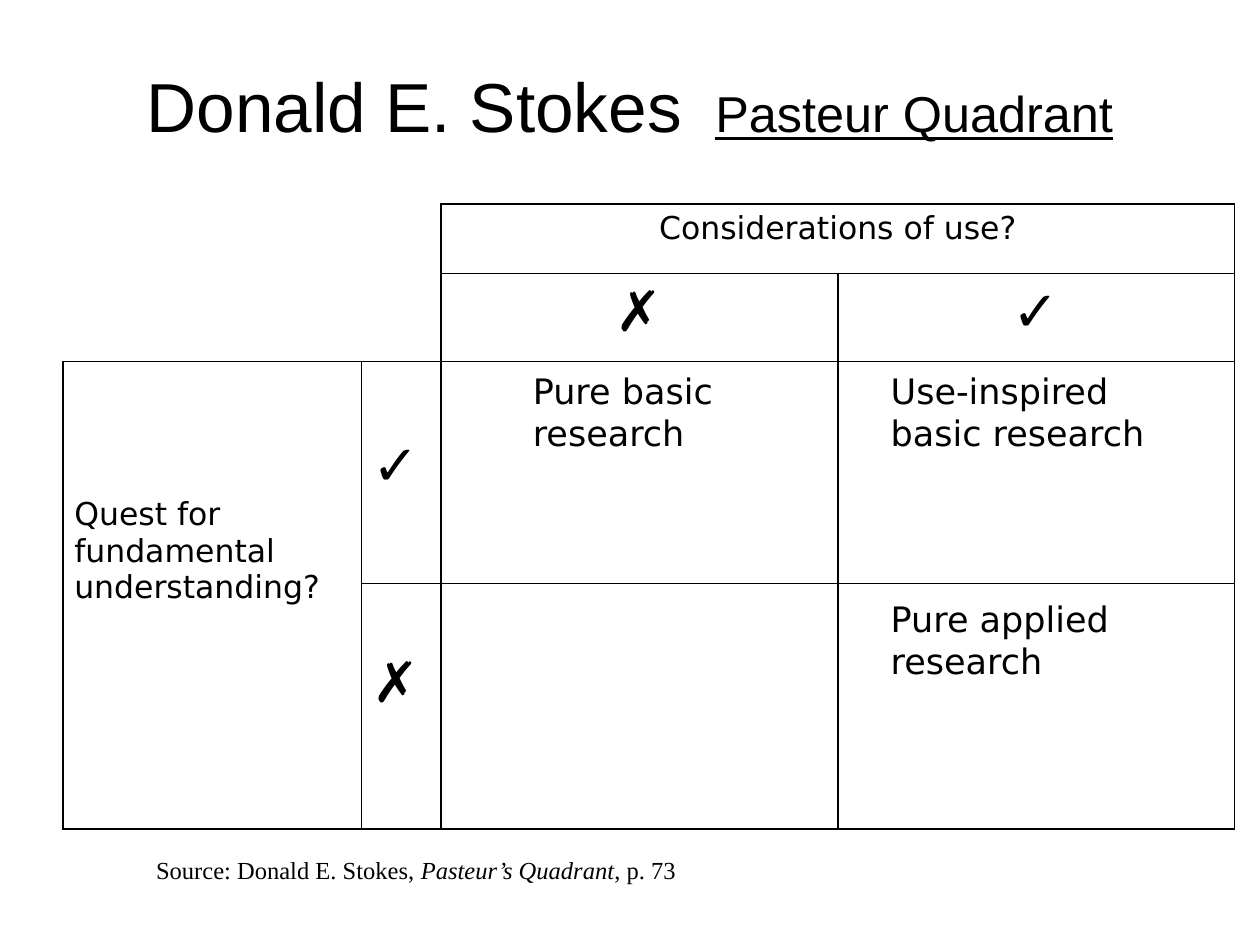
from lxml.etree import SubElement, Element
from pptx import Presentation
from pptx.dml.color import RGBColor
from pptx.enum.text import MSO_ANCHOR as Anchor, PP_ALIGN as Align
from pptx.oxml.ns import qn
from pptx.util import Inches, Pt

BLACK = RGBColor(0, 0, 0)
SANS, ARIAL, SERIF = "DejaVu Sans", "Arial", "Times New Roman"
COLS = [2.37, 0.63, 3.15, 3.15]
ROWS = [0.55, 0.7, 1.76, 1.95]
GRID = (0.5, 1.62, sum(COLS), sum(ROWS))


def write(frame, lines, font=SANS, size=18, align=Align.LEFT):
    """Fill a frame; each line is a string or a list of (text, format) runs."""
    for i, line in enumerate(lines):
        para = frame.paragraphs[0] if i == 0 else frame.add_paragraph()
        para.alignment = align
        for text, form in [(line, {})] if isinstance(line, str) else line:
            run = para.add_run()
            run.text = text
            face = run.font
            face.name, face.size = font, Pt(form.get("size", size))
            face.color.rgb = BLACK
            face.underline = form.get("under")
            face.italic = form.get("italic")


def label(slide, box, lines, wrap=False, anchor=Anchor.TOP, **form):
    frame = slide.shapes.add_textbox(*map(Inches, box)).text_frame
    frame.word_wrap = wrap
    frame.vertical_anchor = anchor
    write(frame, lines, **form)


def edge(cell, sides):
    """Draw the named sides of a cell in black and clear the others."""
    props = cell._tc.get_or_add_tcPr()
    for i, side in enumerate("LRTB"):
        line = Element(qn("a:ln" + side), w=str(Pt(1)))
        if side in sides:
            fill = SubElement(line, qn("a:solidFill"))
            SubElement(fill, qn("a:srgbClr"), val=str(BLACK))
        else:
            SubElement(line, qn("a:noFill"))
        props.insert(i, line)


def matrix(slide, box):
    shape = slide.shapes.add_table(len(ROWS), len(COLS), *map(Inches, box))
    table = shape.table
    table.first_row = table.horz_banding = False
    for col, wide in zip(table.columns, COLS):
        col.width = Inches(wide)
    for row, high in zip(table.rows, ROWS):
        row.height = Inches(high)
    bare = {(0, 0): "", (0, 1): "R", (1, 0): "B", (1, 1): "RB"}
    for r in range(len(ROWS)):
        for c in range(len(COLS)):
            cell = table.cell(r, c)
            cell.fill.background()
            edge(cell, bare.get((r, c), "LRTB"))
    table.cell(0, 2).merge(table.cell(0, 3))
    table.cell(2, 0).merge(table.cell(3, 0))

    mid, left = Align.CENTER, Align.LEFT
    for r, c, text, size, align, top in [
        (0, 2, "Considerations of use?", 18, mid, 0.05),
        (1, 2, "✗", 32, mid, 0.05),
        (1, 3, "✓", 32, mid, 0.05),
        (2, 0, "Quest for fundamental understanding?", 18, left, 1.07),
        (2, 1, "✓", 32, left, 0.57),
        (3, 1, "✗", 32, left, 0.53),
    ]:
        cell = table.cell(r, c)
        cell.margin_left = cell.margin_right = Inches(0.09)
        cell.margin_top, cell.margin_bottom = Inches(top), Inches(0.05)
        write(cell.text_frame, [text], size=size, align=align)


def kinds(slide, box):
    """Name the kinds of research in the quadrants of the matrix."""
    x, y = box[:2]
    mid = x + sum(COLS[:2])
    right = mid + COLS[2] + 0.32
    top = y + sum(ROWS[:2]) + 0.01
    low = y + sum(ROWS[:3]) + 0.06
    for left, high, wide, lines in [
        (mid + 0.63, top, 1.65, ["Pure basic", "research"]),
        (right, top, 2.22, ["Use-inspired", "basic research"]),
        (right, low, 1.95, ["Pure applied", "research"]),
    ]:
        label(slide, (left, high, wide, 0.77), lines, size=20)


def main():
    deck = Presentation()
    deck.slide_width, deck.slide_height = Inches(10), Inches(7.5)
    slide = deck.slides.add_slide(deck.slide_layouts[6])
    title = [("Donald E. Stokes ", {"size": 39.6}), (" ", {}),
             ("Pasteur Quadrant", {"under": True})]
    label(slide, (0.75, 0.21, 8.5, 1.25), [title], wrap=True,
          anchor=Anchor.MIDDLE, font=ARIAL, size=28.8, align=Align.CENTER)
    matrix(slide, GRID)
    source = [("Source: Donald E. Stokes, ", {}),
              ("Pasteur’s Quadrant", {"italic": True}), (", p. 73", {})]
    label(slide, (1.14, 6.74, 4.41, 0.34), [source], font=SERIF, size=14)
    kinds(slide, GRID)
    deck.save("out.pptx")


if __name__ == "__main__":
    main()
